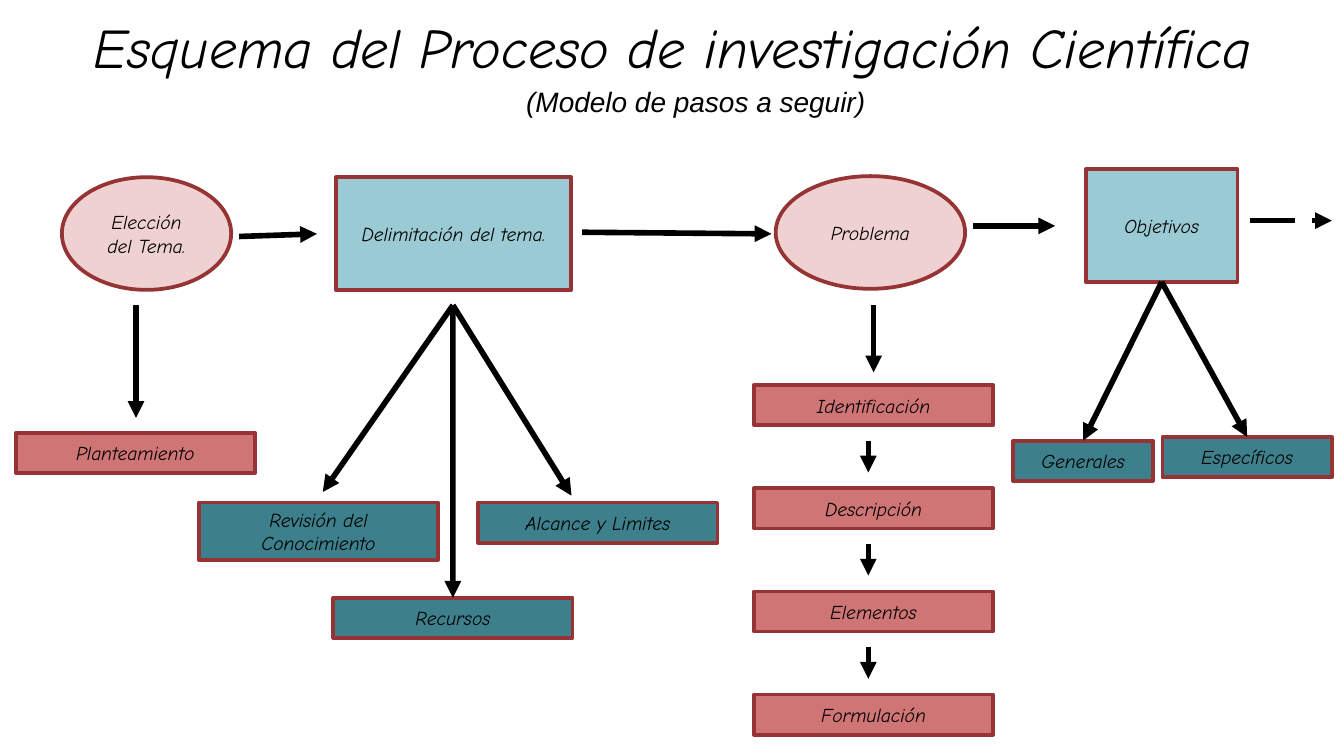
import pptx
import pptx.util
import pptx.dml.color
import pptx.enum.dml
import pptx.enum.shapes
import pptx.enum.text
import pptx.oxml.ns
from lxml import etree

Cm, Pt = pptx.util.Cm, pptx.util.Pt
MSO = pptx.enum.shapes.MSO_SHAPE
ANCHOR = pptx.enum.text.MSO_ANCHOR

COLORS = {"black": "000000", "border": "963334", "pink": "EFD1D1",
          "red": "D07576", "sky": "9ACAD3", "teal": "3D808C"}
FONT = "Comic Neue"

TITLE = "Esquema del Proceso de investigación Científica"
SUBTITLE = "(Modelo de pasos a seguir)"

# Sizes in cm
STAGE_H, STEP_W, STEP_H = 2.13, 4.52, 0.76
CHAIN_X, CHAIN_Y, CHAIN_PITCH = 14.25, 7.28, 1.95
CHAIN_ARROW_X, CHAIN_ARROW_GAP, CHAIN_ARROW_LEN = 16.41, 1.05, 0.6

# Text, shape, fill, left, top, width, height
BOXES = [
    ("Elección del Tema.", MSO.OVAL, "pink", 1.17, 3.35, 3.2, STAGE_H),
    ("Delimitación del tema.", MSO.RECTANGLE, "sky", 6.35, 3.35, 4.45, STAGE_H),
    ("Problema", MSO.OVAL, "pink", 14.66, 3.33, 3.58, STAGE_H),
    ("Objetivos", MSO.RECTANGLE, "sky", 20.52, 3.2, 2.87, STAGE_H),
    ("Planteamiento", MSO.RECTANGLE, "red", 0.3, 8.18, STEP_W, STEP_H),
    ("Revisión del Conocimiento", MSO.RECTANGLE, "teal", 3.76, 9.5, STEP_W, 1.09),
    ("Recursos", MSO.RECTANGLE, "teal", 6.3, 11.3, STEP_W, STEP_H),
    ("Alcance y Limites", MSO.RECTANGLE, "teal", 9.04, 9.5, STEP_W, STEP_H),
    ("Generales", MSO.RECTANGLE, "teal", 19.15, 8.33, 2.64, STEP_H),
    ("Específicos", MSO.RECTANGLE, "teal", 21.97, 8.26, 3.2, STEP_H),
]
PROBLEM_STEPS = ["Identificación", "Descripción", "Elementos", "Formulación"]

# Free arrows: x1, y1, x2, y2
FORK = (8.56, 5.77)
ARROWS = [
    (2.57, 5.77, 2.57, 7.9),
    (4.52, 4.47, 5.99, 4.42),
    (*FORK, 6.1, 9.3),
    (*FORK, 10.8, 9.37),
    (11, 4.39, 14.58, 4.42),
    (16.51, 5.77, 16.51, 7.04),
    (18.39, 4.27, 19.94, 4.27),
]
NEXT_ARROW = (23.62, 4.17, 25.17, 4.17)
OBJECTIVE_TYPES = ["Generales", "Específicos"]


def rgb(name):
    return pptx.dml.color.RGBColor.from_string(COLORS[name])


def write(tf, text, size, font=FONT):
    p = tf.paragraphs[0]
    p.alignment = pptx.enum.text.PP_ALIGN.CENTER
    r = p.add_run()
    r.text = text
    r.font.name, r.font.size = font, Pt(size)
    r.font.italic = True
    r.font.color.rgb = rgb("black")


def add_box(s, text, shape, fill, *place):
    sp = s.shapes.add_shape(shape, *map(Cm, place))
    sp.shadow.inherit = False
    sp.fill.solid()
    sp.fill.fore_color.rgb = rgb(fill)
    sp.line.color.rgb = rgb("border")
    sp.line.width = Pt(2)
    sp.text_frame.word_wrap = True
    sp.text_frame.vertical_anchor = ANCHOR.MIDDLE
    write(sp.text_frame, text, 10.5)
    return sp


def add_arrow(s, x1, y1, x2, y2, dash=None):
    c = s.shapes.add_connector(pptx.enum.shapes.MSO_CONNECTOR.STRAIGHT,
                               Cm(x1), Cm(y1), Cm(x2), Cm(y2))
    c.line.color.rgb = rgb("black")
    c.line.width = Pt(3)
    if dash:
        c.line.dash_style = dash
    qn = pptx.oxml.ns.qn
    ln = c._element.spPr.find(qn("a:ln"))
    etree.SubElement(ln, qn("a:tailEnd"), type="triangle")
    etree.SubElement(c._element.spPr, qn("a:effectLst"))
    return c


def main():
    prs = pptx.Presentation()
    prs.slide_width, prs.slide_height = Cm(25.4), Cm(14.29)
    s = prs.slides.add_slide(prs.slide_layouts[5])

    # Title and subtitle
    title = s.shapes.title
    title.left, title.top, title.width, title.height = map(Cm, (0.71, 0.13, 24, 1.47))
    tf = title.text_frame
    tf.word_wrap = False
    tf.auto_size = pptx.enum.text.MSO_AUTO_SIZE.NONE
    tf.vertical_anchor = ANCHOR.TOP
    tf.margin_left = tf.margin_right = Cm(0.18)
    tf.margin_top = tf.margin_bottom = Cm(0.1)
    write(tf, TITLE, 30)
    subtitle = s.shapes.add_textbox(*map(Cm, (4.65, 1.47, 17, 0.89)))
    subtitle.text_frame.word_wrap = True
    write(subtitle.text_frame, SUBTITLE, 15, "Arial")

    # Stages and their parts
    boxes = {box[0]: add_box(s, *box) for box in BOXES}

    # Chain of steps under the problem
    for i, step in enumerate(PROBLEM_STEPS):
        y = CHAIN_Y + i * CHAIN_PITCH
        add_box(s, step, MSO.RECTANGLE, "red", CHAIN_X, y, STEP_W, STEP_H)
        if i < len(PROBLEM_STEPS) - 1:
            start = y + CHAIN_ARROW_GAP
            add_arrow(s, CHAIN_ARROW_X, start, CHAIN_ARROW_X, start + CHAIN_ARROW_LEN)

    # Free arrows
    for arrow in ARROWS:
        add_arrow(s, *arrow)
    add_arrow(s, *NEXT_ARROW, dash=pptx.enum.dml.MSO_LINE.DASH_DOT_DOT)

    # Arrows joined to boxes
    add_arrow(s, *FORK, *FORK).end_connect(boxes["Recursos"], 0)
    for name in OBJECTIVE_TYPES:
        c = add_arrow(s, 0, 0, 1, 1)
        c.begin_connect(boxes["Objetivos"], 2)
        c.end_connect(boxes[name], 0)

    prs.save("out.pptx")


if __name__ == "__main__":
    main()
